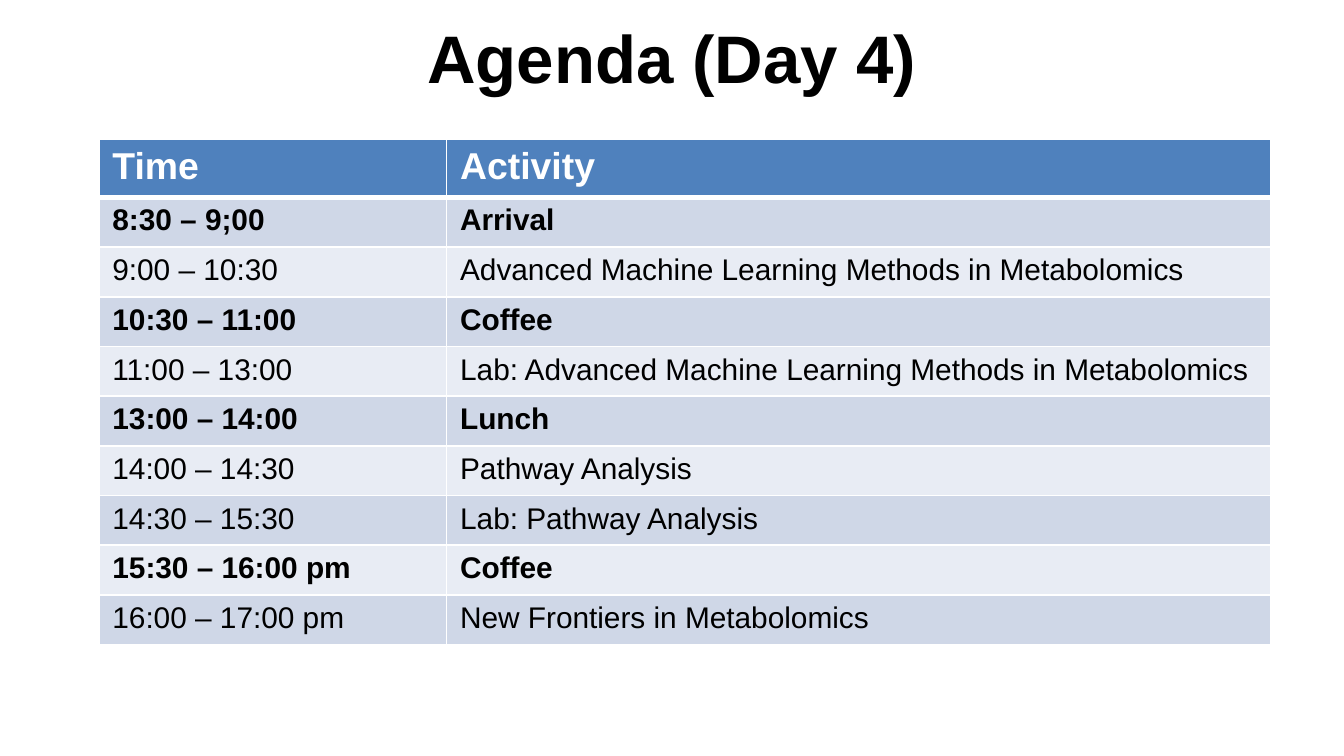
"""Build the day 4 agenda slide."""
from dataclasses import dataclass

from lxml.etree import SubElement
from pptx import Presentation
from pptx.dml.color import RGBColor
from pptx.enum.text import MSO_ANCHOR, PP_ALIGN
from pptx.oxml.ns import qn
from pptx.util import Pt


@dataclass(frozen=True)
class Theme:
    """Hold the colours, font and type sizes."""
    font: str = "Arial"
    ink: str = "000000"
    white: str = "FFFFFF"
    head: str = "4F81BD"
    bands: tuple = ("CFD7E7", "E8ECF4")
    title: int = 36
    label: int = 20
    body: int = 16


THEME = Theme()
HEADS = ("Time", "Activity")
AGENDA = (
    ("8:30 – 9;00", "Arrival"),
    ("9:00 – 10:30", "Advanced Machine Learning Methods in Metabolomics"),
    ("10:30 – 11:00", "Coffee"),
    ("11:00 – 13:00", "Lab: Advanced Machine Learning Methods in Metabolomics"),
    ("13:00 – 14:00", "Lunch"),
    ("14:00 – 14:30", "Pathway Analysis"),
    ("14:30 – 15:30", "Lab: Pathway Analysis"),
    ("15:30 – 16:00 pm", "Coffee"),
    ("16:00 – 17:00 pm", "New Frontiers in Metabolomics"),
)
BREAKS = {"Arrival", "Coffee", "Lunch"}
WIDTHS = (186.3, 441.3)
HEAD_ROW, BODY_ROW = 31.2, 26.64


def write(frame, text, size=THEME.body, color=THEME.ink, bold=False,
          align=PP_ALIGN.LEFT):
    """Put one formatted line of text in a frame."""
    line = frame.paragraphs[0]
    line.alignment = align
    run = line.add_run()
    run.text = text
    run.font.name = THEME.font
    run.font.size = Pt(size)
    run.font.bold = bold
    run.font.color.rgb = RGBColor.from_string(color)


def border(cell, top=1, base=1):
    """Draw white rules on the four sides of a cell."""
    props = cell._tc.get_or_add_tcPr()
    for side, width in (("L", 1), ("R", 1), ("T", top), ("B", base)):
        rule = SubElement(props, qn(f"a:ln{side}"), w=str(Pt(width)))
        fill = SubElement(rule, qn("a:solidFill"))
        SubElement(fill, qn("a:srgbClr"), val=THEME.white)


def add_title(slide, text):
    """Add the centred title."""
    box = slide.shapes.add_textbox(Pt(36), Pt(-3.6), Pt(648), Pt(67.7))
    frame = box.text_frame
    frame.word_wrap = True
    frame.vertical_anchor = MSO_ANCHOR.MIDDLE
    write(frame, text, size=THEME.title, bold=True, align=PP_ALIGN.CENTER)


def add_row(table, index, texts, fill, top=1, base=1, **style):
    """Fill one table row with ruled, coloured cells."""
    for cell, text in zip(table.rows[index].cells, texts):
        border(cell, top, base)
        cell.fill.solid()
        cell.fill.fore_color.rgb = RGBColor.from_string(fill)
        write(cell.text_frame, text, **style)


def add_agenda(slide):
    """Add the agenda table with its header and banded rows."""
    count = len(AGENDA) + 1
    height = HEAD_ROW + BODY_ROW * len(AGENDA)
    table = slide.shapes.add_table(count, len(HEADS), Pt(53), Pt(74.5),
                                   Pt(sum(WIDTHS)), Pt(height)).table
    for column, width in zip(table.columns, WIDTHS):
        column.width = Pt(width)
    for index, row in enumerate(table.rows):
        row.height = Pt(BODY_ROW if index else HEAD_ROW)
    add_row(table, 0, HEADS, THEME.head, base=3, size=THEME.label,
            color=THEME.white, bold=True)
    for index, texts in enumerate(AGENDA):
        add_row(table, index + 1, texts, THEME.bands[index % 2],
                top=1 if index else 3, bold=texts[1] in BREAKS)


def main():
    """Build and save the slide."""
    deck = Presentation()
    deck.slide_width, deck.slide_height = Pt(720), Pt(405)
    slide = deck.slides.add_slide(deck.slide_layouts[6])
    add_title(slide, "Agenda (Day 4)")
    add_agenda(slide)
    deck.save("out.pptx")


if __name__ == "__main__":
    main()
